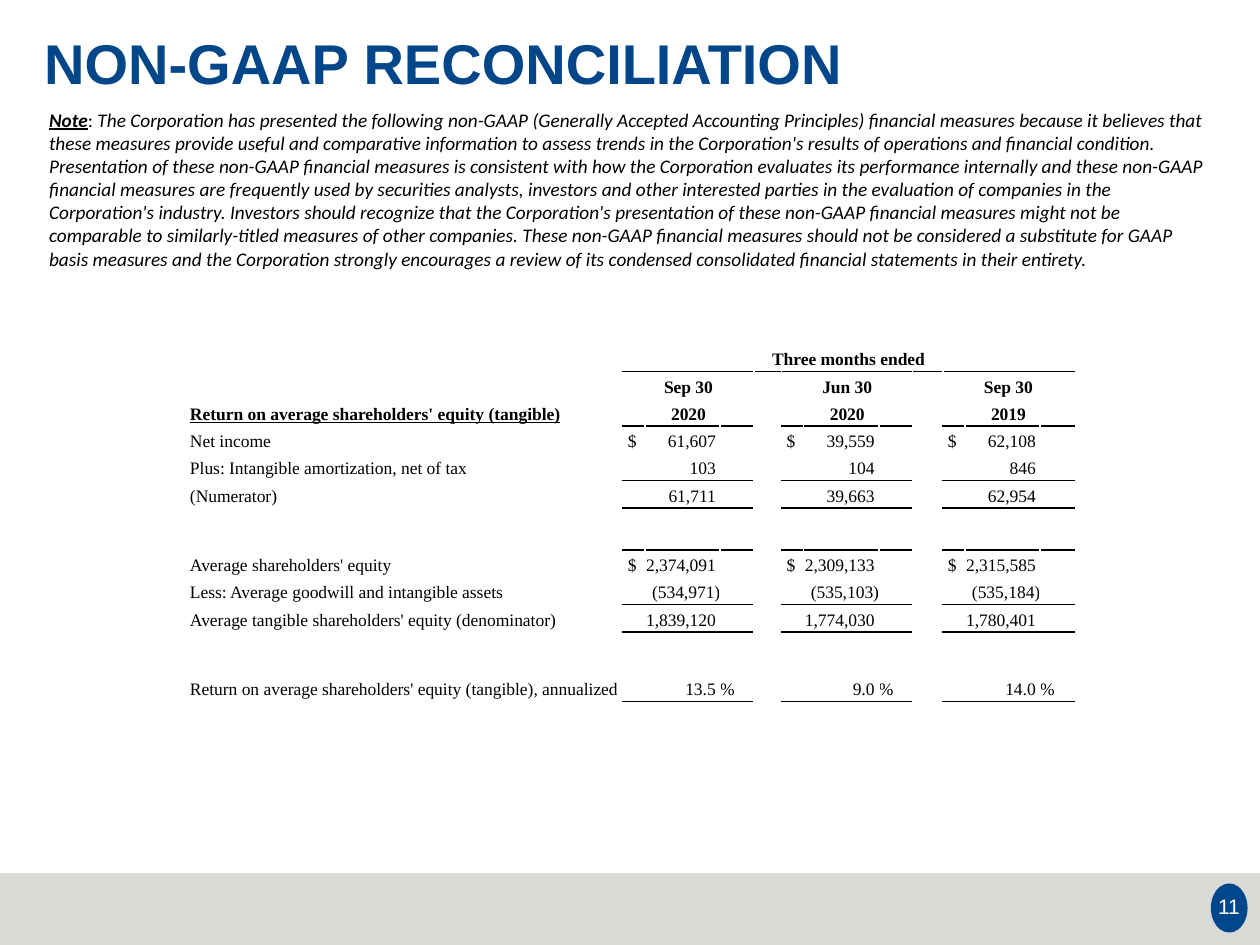
from dataclasses import dataclass

from lxml import etree
from pptx import Presentation
from pptx.dml.color import RGBColor
from pptx.enum.shapes import MSO_SHAPE
from pptx.enum.text import MSO_ANCHOR, PP_ALIGN
from pptx.oxml.ns import qn
from pptx.util import Cm, Pt

LEFT, CENTER, RIGHT = PP_ALIGN.LEFT, PP_ALIGN.CENTER, PP_ALIGN.RIGHT
TOP, MIDDLE, BOTTOM = MSO_ANCHOR.TOP, MSO_ANCHOR.MIDDLE, MSO_ANCHOR.BOTTOM
RECTANGLE, OVAL = MSO_SHAPE.RECTANGLE, MSO_SHAPE.OVAL

BLACK, WHITE, GREY = "000000", "FFFFFF", "D9D9D6"
TITLE_BLUE, BADGE_BLUE = "004689", "00468B"

NOTE_SENTENCES = (
    "The Corporation has presented the following non-GAAP (Generally Accepted Accounting "
    "Principles) financial measures because it believes that these measures provide useful "
    "and comparative information to assess trends in the Corporation's results of operations "
    "and financial condition.",
    "Presentation of these non-GAAP financial measures is consistent "
    "with how the Corporation evaluates its performance internally and these non-GAAP "
    "financial measures are frequently used by securities analysts, investors and other "
    "interested parties in the evaluation of companies in the Corporation's industry.",
    "Investors should recognize that the Corporation's presentation of these non-GAAP "
    "financial measures might not be comparable to similarly-titled measures of other "
    "companies.",
    "These non-GAAP financial measures should not be considered a substitute for "
    "GAAP basis measures and the Corporation strongly encourages a review of its condensed "
    "consolidated financial statements in their entirety.",
)


@dataclass(frozen=True)
class Row:
    label: str = ""
    values: tuple[str, ...] = ()
    heading: bool = False
    sign: str = ""
    unit: str = ""
    ruled: bool = False

    @property
    def is_spacer(self) -> bool:
        return not self.values


ROWS = (
    Row(values=("Three months ended",), heading=True, ruled=True),
    Row(values=("Sep 30", "Jun 30", "Sep 30"), heading=True),
    Row("Return on average shareholders' equity (tangible)", ("2020", "2020", "2019"),
        heading=True, ruled=True),
    Row("Net income", ("61,607", "39,559", "62,108"), sign="$"),
    Row("Plus: Intangible amortization, net of tax", ("103", "104", "846"), ruled=True),
    Row("(Numerator)", ("61,711", "39,663", "62,954"), ruled=True),
    Row(ruled=True),
    Row("Average shareholders' equity", ("2,374,091", "2,309,133", "2,315,585"), sign="$"),
    Row("Less: Average goodwill and intangible assets",
        ("(534,971)", "(535,103)", "(535,184)"), ruled=True),
    Row("Average tangible shareholders' equity (denominator)",
        ("1,839,120", "1,774,030", "1,780,401"), ruled=True),
    Row(),
    Row("Return on average shareholders' equity (tangible), annualized",
        ("13.5", "9.0", "14.0"), unit="%", ruled=True),
    Row(),
)
GROUP_WIDTHS = (0.44, 1.52, 0.68)
COLUMN_WIDTHS = (8.13, 0.7, *GROUP_WIDTHS, 0.56, *GROUP_WIDTHS, 0.61, *GROUP_WIDTHS)
GROUP_STARTS = (2, 6, 10)
GAP_COLUMNS = (5, 9)
LAST_COLUMN = len(COLUMN_WIDTHS) - 1
ROW_HEIGHT, SPACER_HEIGHT = 0.55, 0.85


def color(value: str) -> RGBColor:
    return RGBColor.from_string(value)


def add_text(paragraph, text: str, *, size: float, font: str, fill: str = BLACK,
             bold: bool = False, italic: bool = False, underline: bool = False,
             align=LEFT, spacing: float = 1.0) -> None:
    paragraph.alignment = align
    paragraph.line_spacing = spacing
    run = paragraph.add_run()
    run.text = text
    run.font.size = Pt(size)
    run.font.name = font
    run.font.color.rgb = color(fill)
    run.font.bold, run.font.italic, run.font.underline = bold, italic, underline


def add_text_box(slide, left: float, top: float, width: float, height: float, anchor=TOP):
    """Add a wrapped text box and return its first paragraph."""
    frame = slide.shapes.add_textbox(Cm(left), Cm(top), Cm(width), Cm(height)).text_frame
    frame.word_wrap = True
    frame.vertical_anchor = anchor
    frame.margin_left = frame.margin_right = frame.margin_top = frame.margin_bottom = Cm(0.25)
    return frame.paragraphs[0]


def add_plain_shape(slide, kind, left: float, top: float, width: float, height: float,
                    fill: str) -> None:
    shape = slide.shapes.add_shape(kind, Cm(left), Cm(top), Cm(width), Cm(height))
    shape.shadow.inherit = False
    shape.fill.solid()
    shape.fill.fore_color.rgb = color(fill)
    shape.line.fill.background()


def has_rule_below(row: int, column: int) -> bool:
    if row < 0 or not ROWS[row].ruled or column < GROUP_STARTS[0]:
        return False
    return row == 0 or column not in GAP_COLUMNS


def prepare_cell(cell, row: int, column: int) -> None:
    """Clear the fill, draw the four borders and keep an empty cell low."""
    properties = cell._tc.get_or_add_tcPr()
    borders = {
        "a:lnL": WHITE,
        "a:lnR": WHITE,
        "a:lnT": BLACK if has_rule_below(row - 1, column) else WHITE,
        "a:lnB": BLACK if has_rule_below(row, column) else WHITE,
    }
    for tag, value in borders.items():
        line = etree.SubElement(properties, qn(tag), w=str(Pt(1)))
        solid = etree.SubElement(line, qn("a:solidFill"))
        etree.SubElement(solid, qn("a:srgbClr"), val=value)
    cell.fill.background()
    cell.vertical_anchor = BOTTOM
    cell.margin_left = cell.margin_right = cell.margin_top = Cm(0)
    cell.margin_bottom = Cm(0.05)
    etree.SubElement(cell.text_frame.paragraphs[0]._p, qn("a:endParaRPr"), sz="1000")


def fill_cell(table, row: int, first: int, last: int, text: str, *, left: float = 0.1,
              right: float = 0, align=LEFT, bold: bool = False,
              underline: bool = False) -> None:
    """Merge a run of columns and write its text."""
    cell = table.cell(row, first)
    if last > first:
        cell.merge(table.cell(row, last))
    cell.margin_left, cell.margin_right = Cm(left), Cm(right)
    if text:
        add_text(cell.text_frame.paragraphs[0], text, size=10, font="Times New Roman",
                 bold=bold, underline=underline, align=align, spacing=0.83)


def fill_group(table, index: int, row: Row, start: int, value: str) -> None:
    end = start + len(GROUP_WIDTHS) - 1
    if row.heading or row.is_spacer:
        end = LAST_COLUMN if len(row.values) == 1 else end
        fill_cell(table, index, start, end, value, right=0.1, align=CENTER, bold=True)
        return
    number_start = start
    if row.sign:
        fill_cell(table, index, start, start, row.sign)
        number_start = start + 1
    fill_cell(table, index, number_start, end - 1, value, left=0,
              right=0 if value.endswith(")") else 0.09, align=RIGHT)
    if row.unit:
        fill_cell(table, index, end, end, row.unit, left=0)


def add_reconciliation(slide) -> None:
    heights = [SPACER_HEIGHT if row.is_spacer else ROW_HEIGHT for row in ROWS]
    table = slide.shapes.add_table(len(ROWS), len(COLUMN_WIDTHS), Cm(3.73), Cm(6.94),
                                   Cm(sum(COLUMN_WIDTHS)), Cm(sum(heights))).table
    table.first_row = table.horz_banding = False
    for column, width in zip(table.columns, COLUMN_WIDTHS):
        column.width = Cm(width)
    for index, row in enumerate(ROWS):
        table.rows[index].height = Cm(heights[index])
        for column in range(len(COLUMN_WIDTHS)):
            prepare_cell(table.cell(index, column), index, column)
        if row.label:
            fill_cell(table, index, 0, 1, row.label, right=0.1,
                      bold=row.heading, underline=row.heading)
        for start, value in zip(GROUP_STARTS, row.values or ("",) * len(GROUP_STARTS)):
            fill_group(table, index, row, start, value)


def main() -> None:
    presentation = Presentation()
    presentation.slide_width, presentation.slide_height = Cm(25.4), Cm(19.05)
    slide = presentation.slides.add_slide(presentation.slide_layouts[6])

    add_plain_shape(slide, RECTANGLE, 0, 17.6, 25.4, 1.45, GREY)
    add_plain_shape(slide, OVAL, 24.41, 17.81, 0.74, 0.99, BADGE_BLUE)

    title = add_text_box(slide, 0.64, 0.48, 24.56, 2.9)
    add_text(title, "NON-GAAP RECONCILIATION", size=32, font="Arial", fill=TITLE_BLUE,
             bold=True, spacing=0.9)

    note = add_text_box(slide, 0.74, 1.93, 23.9, 3.56)
    add_text(note, "Note", size=11, font="Calibri", bold=True, italic=True, underline=True)
    add_text(note, ": ", size=11, font="Calibri")
    add_text(note, " ".join(NOTE_SENTENCES), size=11, font="Calibri", italic=True)

    page_number = add_text_box(slide, 24.18, 17.78, 1.19, 0.99, anchor=MIDDLE)
    add_text(page_number, "11", size=12, font="Arial", fill=WHITE, align=CENTER)

    add_reconciliation(slide)
    presentation.save("out.pptx")


if __name__ == "__main__":
    main()
